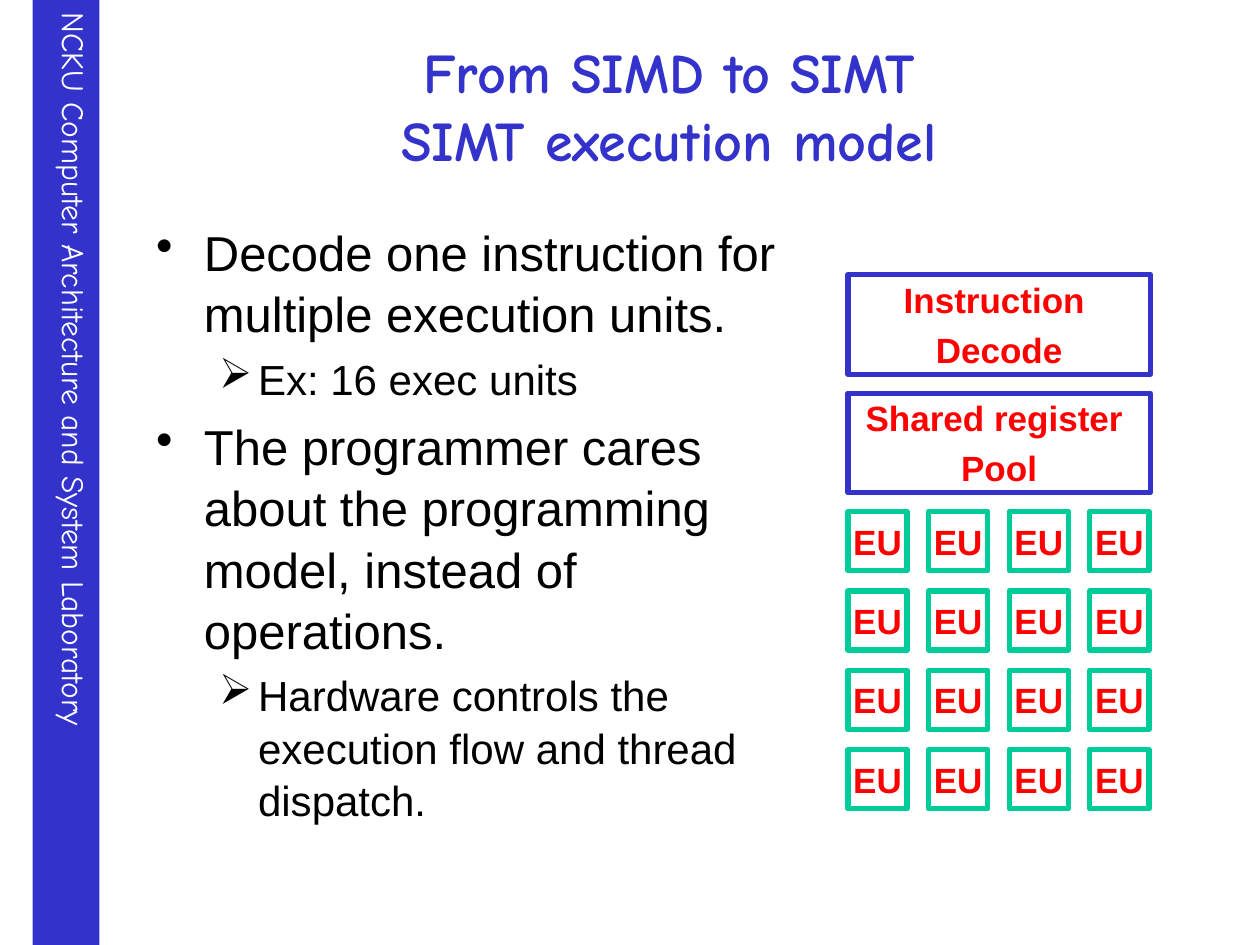
import dataclasses
import itertools

import lxml.etree
import pptx
import pptx.dml.color
import pptx.enum.shapes
import pptx.enum.text
import pptx.oxml.ns
import pptx.util

Inches, Pt = pptx.util.Inches, pptx.util.Pt
RGB = pptx.dml.color.RGBColor
ALIGN = pptx.enum.text.PP_ALIGN
ANCHOR = pptx.enum.text.MSO_ANCHOR
qn = pptx.oxml.ns.qn

BLUE = RGB(0x33, 0x33, 0xCC)
GREEN = RGB(0x00, 0xCC, 0x99)
RED = RGB(0xFF, 0x00, 0x00)
BLACK = RGB(0x00, 0x00, 0x00)
WHITE = RGB(0xFF, 0xFF, 0xFF)

COMIC = "Comic Neue"
TITLE = dict(name=COMIC, size=Pt(32), bold=True)
SIDE = dict(name=COMIC, size=Pt(18), bold=False)
LABEL = dict(name="Arial", size=Pt(20), bold=True)


@dataclasses.dataclass
class Box:
    left: float
    top: float
    width: float
    height: float
    edge: RGB
    lines: tuple


@dataclasses.dataclass
class Level:
    mark: str
    margin: float
    hang: float
    size: int
    before: float


LEVELS = (Level("•", 0.38, 0.38, 28, 6), Level("➢", 0.81, 0.31, 24, 5))
POINTS = (
    (0, "Decode one instruction for multiple execution units."),
    (1, "Ex: 16 exec units"),
    (0, "The programmer cares about the programming model, instead of operations."),
    (1, "Hardware controls the execution flow and thread dispatch."),
)


def style(font, form: dict, color: RGB) -> None:
    for key, value in form.items():
        setattr(font, key, value)
    font.color.rgb = color


def add_rect(slide, left: float, top: float, width: float, height: float):
    rect = slide.shapes.add_shape(
        pptx.enum.shapes.MSO_SHAPE.RECTANGLE,
        Inches(left), Inches(top), Inches(width), Inches(height))
    rect.shadow.inherit = False
    return rect


def add_side(slide) -> None:
    bar = add_rect(slide, 0.26, 0, 0.53, 7.5)
    bar.fill.solid()
    bar.fill.fore_color.rgb = BLUE
    bar.line.fill.background()
    frame = bar.text_frame
    frame.vertical_anchor = ANCHOR.TOP
    frame._txBody.bodyPr.set("vert", "eaVert")
    para = frame.paragraphs[0]
    para.text = "NCKU Computer Architecture and System Laboratory"
    para.alignment = ALIGN.LEFT
    style(para.font, SIDE, WHITE)


def add_title(slide) -> None:
    title = slide.shapes.title
    title.left, title.top = Inches(0.9), Inches(0.21)
    title.width, title.height = Inches(8.82), Inches(1.25)
    frame = title.text_frame
    frame.auto_size = pptx.enum.text.MSO_AUTO_SIZE.NONE
    frame.vertical_anchor = ANCHOR.MIDDLE
    para = frame.paragraphs[0]
    para.text = "From SIMD to SIMT\vSIMT execution model"
    para.alignment = ALIGN.CENTER
    style(para.font, TITLE, BLUE)


def add_points(slide) -> None:
    body = slide.shapes.add_textbox(
        Inches(1.14), Inches(1.7), Inches(5.28), Inches(5.35))
    frame = body.text_frame
    frame.word_wrap = True
    for i, (depth, text) in enumerate(POINTS):
        level = LEVELS[depth]
        para = frame.add_paragraph() if i else frame.paragraphs[0]
        para.text = text
        para.level = depth
        para.line_spacing = 1.04
        para.space_before = Pt(level.before if i else 0)
        # Hanging bullet
        props = para._p.get_or_add_pPr()
        props.set("marL", str(Inches(level.margin)))
        props.set("indent", str(-Inches(level.hang)))
        mark = lxml.etree.SubElement(props, qn("a:buChar"))
        mark.set("char", level.mark)
        style(para.font, dict(name="Arial", size=Pt(level.size)), BLACK)


def add_box(slide, box: Box) -> None:
    rect = add_rect(slide, box.left, box.top, box.width, box.height)
    rect.fill.background()
    rect.line.color.rgb = box.edge
    rect.line.width = Pt(3)
    frame = rect.text_frame
    frame.word_wrap = False
    frame.vertical_anchor = ANCHOR.MIDDLE
    for i, text in enumerate(box.lines):
        para = frame.add_paragraph() if i else frame.paragraphs[0]
        para.text = text
        para.alignment = ALIGN.CENTER
        para.space_before = Pt(4.6 if i else 0)
        style(para.font, LABEL, RED)


def main() -> None:
    deck = pptx.Presentation()
    deck.slide_width, deck.slide_height = Inches(10), Inches(7.5)
    slide = deck.slides.add_slide(deck.slide_layouts[5])

    add_side(slide)
    add_title(slide)
    add_points(slide)

    # Execution units, four by four
    for row, col in itertools.product(range(4), repeat=2):
        add_box(slide, Box(6.73 + 0.64 * col, 4.06 + 0.63 * row,
                           0.47, 0.47, GREEN, ("EU",)))

    # Shared stages above the units
    stages = (("Instruction ", "Decode"), ("Shared register ", "Pool"))
    for row, lines in enumerate(stages):
        add_box(slide, Box(6.73, 2.18 + 0.94 * row, 2.4, 0.79, BLUE, lines))

    deck.save("out.pptx")


if __name__ == "__main__":
    main()
